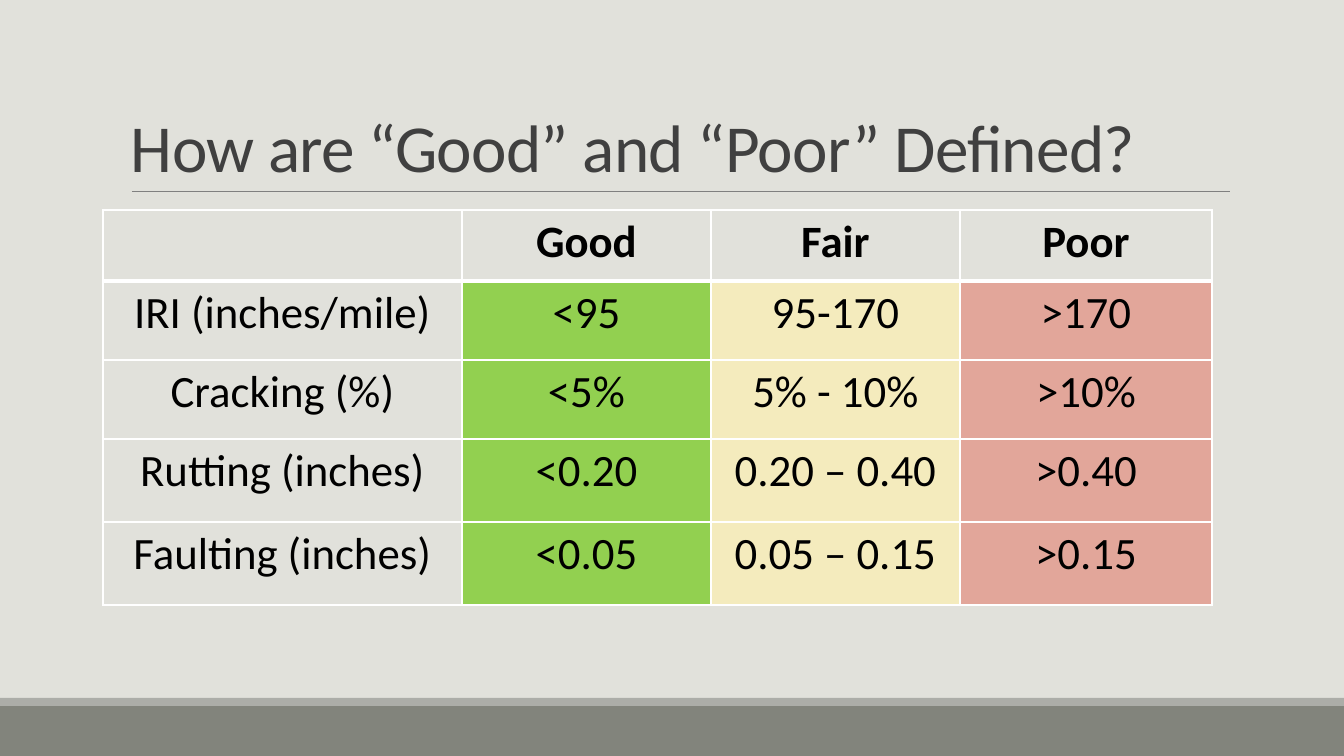
import pptx
import pptx.util
import pptx.dml.color
import pptx.enum.shapes
import pptx.enum.text
import pptx.oxml
import pptx.oxml.ns
from dataclasses import dataclass

SCALE = 914400 / 100.8  # EMU in one px


@dataclass(frozen=True)
class Theme:
    font: str = "Calibri"
    back: str = "E1E1DB"
    band: str = "82847C"
    strip: str = "ACADA8"
    rule: str = "808080"
    title: str = "404040"
    text: str = "000000"
    edge: str = "FFFFFF"
    fills: tuple = (None, "92D050", "F4EBBD", "E2A69A")
    big: int = 48
    body: int = 32


THEME = Theme()

ROWS = [
    ("", "Good", "Fair", "Poor"),
    ("IRI (inches/mile)", "<95", "95-170", ">170"),
    ("Cracking (%)", "<5%", "5% - 10%", ">10%"),
    ("Rutting (inches)", "<0.20", "0.20 – 0.40", ">0.40"),
    ("Faulting (inches)", "<0.05", "0.05 – 0.15", ">0.15"),
]
WIDTHS = (359, 249, 249, 252)
HEIGHTS = (71, 79, 79, 83, 83)


def px(*sizes):
    return [pptx.util.Emu(round(size * SCALE)) for size in sizes]


def rgb(code):
    return pptx.dml.color.RGBColor.from_string(code)


def style(run, size, color, bold=False):
    font = run.font
    font.name, font.bold = THEME.font, bold
    font.size = pptx.util.Pt(size)
    font.color.rgb = rgb(color)


def add_bar(slide, box, color):
    kind = pptx.enum.shapes.MSO_SHAPE.RECTANGLE
    bar = slide.shapes.add_shape(kind, *px(*box))
    bar.shadow.inherit = False
    bar.fill.solid()
    bar.fill.fore_color.rgb = rgb(color)
    bar.line.fill.background()


def add_rule(slide, ends):
    kind = pptx.enum.shapes.MSO_CONNECTOR.STRAIGHT
    rule = slide.shapes.add_connector(kind, *px(*ends))
    rule.line.color.rgb = rgb(THEME.rule)
    rule.line.width = pptx.util.Pt(0.5)
    props = rule._element.spPr
    props.append(props.makeelement(pptx.oxml.ns.qn("a:effectLst"), {}))


def add_title(slide, box, text):
    frame = slide.shapes.add_textbox(*px(*box)).text_frame
    frame.word_wrap = True
    frame.vertical_anchor = pptx.enum.text.MSO_ANCHOR.BOTTOM
    frame.text = text
    para = frame.paragraphs[0]
    para.line_spacing = 0.85
    run = para.runs[0]
    style(run, THEME.big, THEME.title)
    run.font._element.set("spc", "-50")


def add_edge(cell, side, width):
    space = pptx.oxml.ns.nsdecls("a")
    line = pptx.oxml.parse_xml(
        f'<a:ln{side} {space} w="{pptx.util.Pt(width)}"><a:solidFill>'
        f'<a:srgbClr val="{THEME.edge}"/></a:solidFill></a:ln{side}>')
    cell._tc.get_or_add_tcPr().append(line)


def fill_cell(cell, text, row, color):
    # Edges come before the fill in the cell's XML
    heavy = {(0, "B"), (1, "T")}
    for side in "LRTB":
        add_edge(cell, side, 3 if (row, side) in heavy else 1)
    if color and row:
        cell.fill.solid()
        cell.fill.fore_color.rgb = rgb(color)
    else:
        cell.fill.background()
    cell.text_frame.text = text
    para = cell.text_frame.paragraphs[0]
    para.alignment = pptx.enum.text.PP_ALIGN.CENTER
    for run in para.runs:
        style(run, THEME.body, THEME.text, bold=row == 0)


def add_grid(slide, left, top):
    box = px(left, top, sum(WIDTHS), sum(HEIGHTS))
    table = slide.shapes.add_table(len(ROWS), len(WIDTHS), *box).table
    table.horz_banding = False
    for col, width in zip(table.columns, px(*WIDTHS)):
        col.width = width
    for row, height in zip(table.rows, px(*HEIGHTS)):
        row.height = height
    for i, texts in enumerate(ROWS):
        for j, text in enumerate(texts):
            fill_cell(table.cell(i, j), text, i, THEME.fills[j])


def main():
    deck = pptx.Presentation()
    deck.slide_width, deck.slide_height = px(1344, 756)
    slide = deck.slides.add_slide(deck.slide_layouts[6])
    slide.background.fill.solid()
    slide.background.fill.fore_color.rgb = rgb(THEME.back)

    # Footer bands
    add_bar(slide, (0, 706, 1344, 50), THEME.band)
    add_bar(slide, (0, 698, 1344, 8), THEME.strip)

    # Heading
    add_rule(slide, (132, 191, 1230, 191))
    add_title(slide, (121, 31, 1109, 160),
              "How are “Good” and “Poor” Defined?")

    # Rating limits
    add_grid(slide, 103, 210)
    deck.save("out.pptx")


if __name__ == "__main__":
    main()
